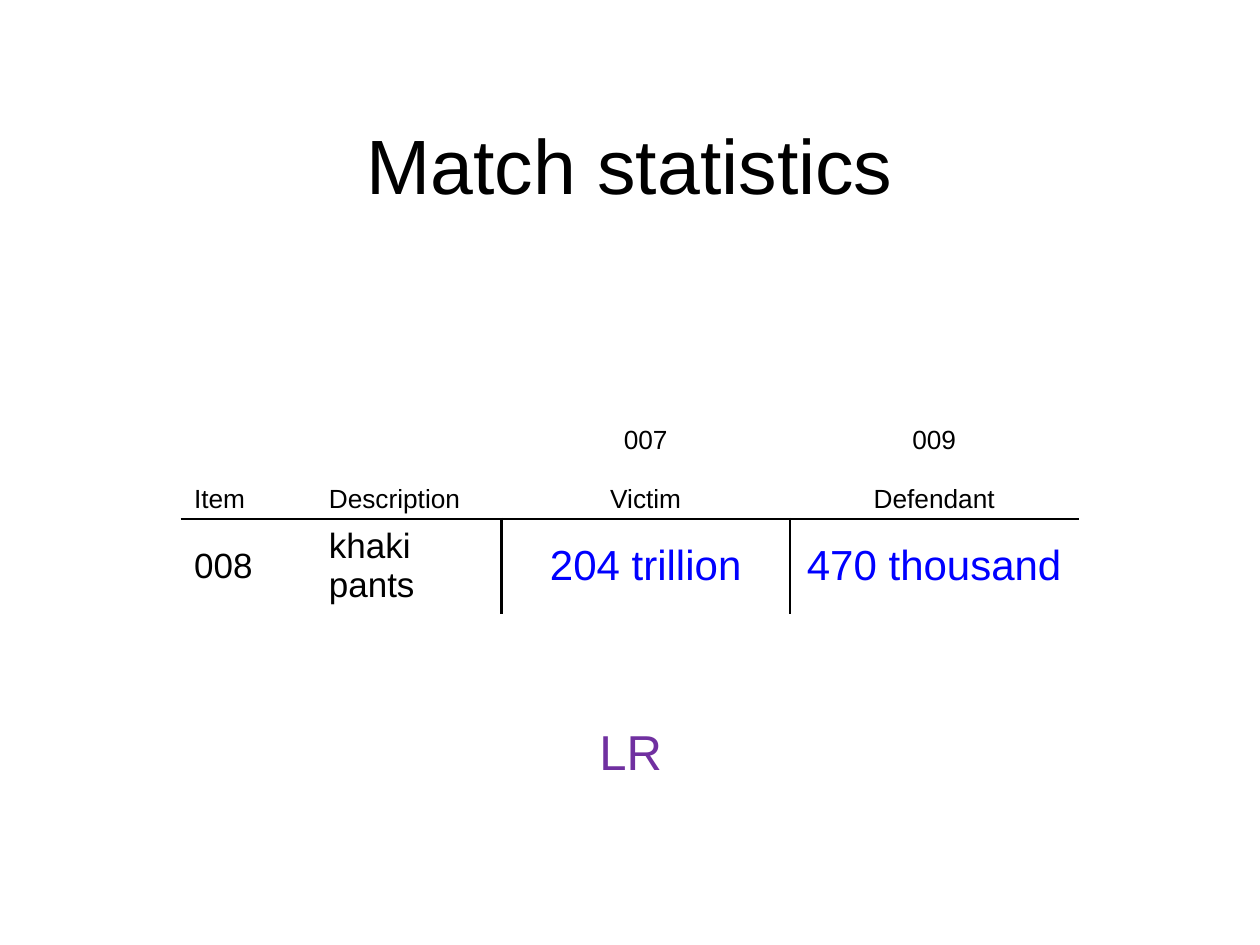
"""Build the match statistics slide."""
from lxml import etree
from pptx import Presentation
from pptx.dml.color import RGBColor
from pptx.enum import text
from pptx.oxml import parse_xml
from pptx.oxml.ns import nsdecls
from pptx.util import Inches, Pt


def style(p, size, color, align):
    p.alignment = align
    for r in p.runs:
        r.font.name = "Arial"
        r.font.size = Pt(size)
        r.font.bold = False
        r.font.color.rgb = RGBColor.from_string(color)


def add_borders(cell, sides):
    tcPr = cell._tc.get_or_add_tcPr()
    for i, side in enumerate(sides):
        tcPr.insert(i, parse_xml(
            f'<a:ln{side} {nsdecls("a")} w="19050"><a:solidFill>'
            f'<a:srgbClr val="000000"/></a:solidFill></a:ln{side}>'))


LEFT, CENTER = text.PP_ALIGN.LEFT, text.PP_ALIGN.CENTER
MIDDLE, BOTTOM = text.MSO_ANCHOR.MIDDLE, text.MSO_ANCHOR.BOTTOM

prs = Presentation()
prs.slide_width, prs.slide_height = Inches(10), Inches(7.5)
s = prs.slides.add_slide(prs.slide_layouts[6])

labels = [
    ("Match statistics", (0.05, 0.67, 9.9, 1.25), 44, "000000", True),
    ("LR", (4.65, 5.68, 0.71, 0.57), 28, "7030A0", False),
]
for label, box, size, color, wrap in labels:
    tf = s.shapes.add_textbox(*map(Inches, box)).text_frame
    tf.text = label
    tf.word_wrap = wrap
    tf.vertical_anchor = MIDDLE if wrap else text.MSO_ANCHOR.TOP
    tf.auto_size = text.MSO_AUTO_SIZE.NONE if wrap else text.MSO_AUTO_SIZE.SHAPE_TO_FIT_TEXT
    style(tf.paragraphs[0], size, color, CENTER)

rows = [
    ["Item", "Description", "007\nVictim", "009\nDefendant"],
    ["008", "khaki pants", "204 trillion", "470 thousand"],
]
borders = [["B"] * 4, ["T", "RT", "LT", "T"]]
widths, heights = [1.07, 1.47, 2.29, 2.29], [1.1, 0.57]
table = s.shapes.add_table(2, 4, Inches(1.44), Inches(3.02),
                           Inches(sum(widths)), Inches(sum(heights))).table
table.first_row = table.horz_banding = False
for col, width in zip(table.columns, widths):
    col.width = Inches(width)
for i, values in enumerate(rows):
    table.rows[i].height = Inches(heights[i])
    for j, value in enumerate(values):
        cell = table.cell(i, j)
        cell.text = value
        cell.fill.background()
        cell.margin_top = cell.margin_bottom = Inches(0.04)
        cell.vertical_anchor = MIDDLE if i else BOTTOM
        add_borders(cell, borders[i][j])
        size = (24 if j > 1 else 20) if i else 15
        color = "0000FF" if i and j > 1 else "000000"
        for k, p in enumerate(cell.text_frame.paragraphs):
            style(p, size, color, CENTER if j > 1 else LEFT)
            if k:
                p.space_before = Pt(17)

prs.save("out.pptx")
